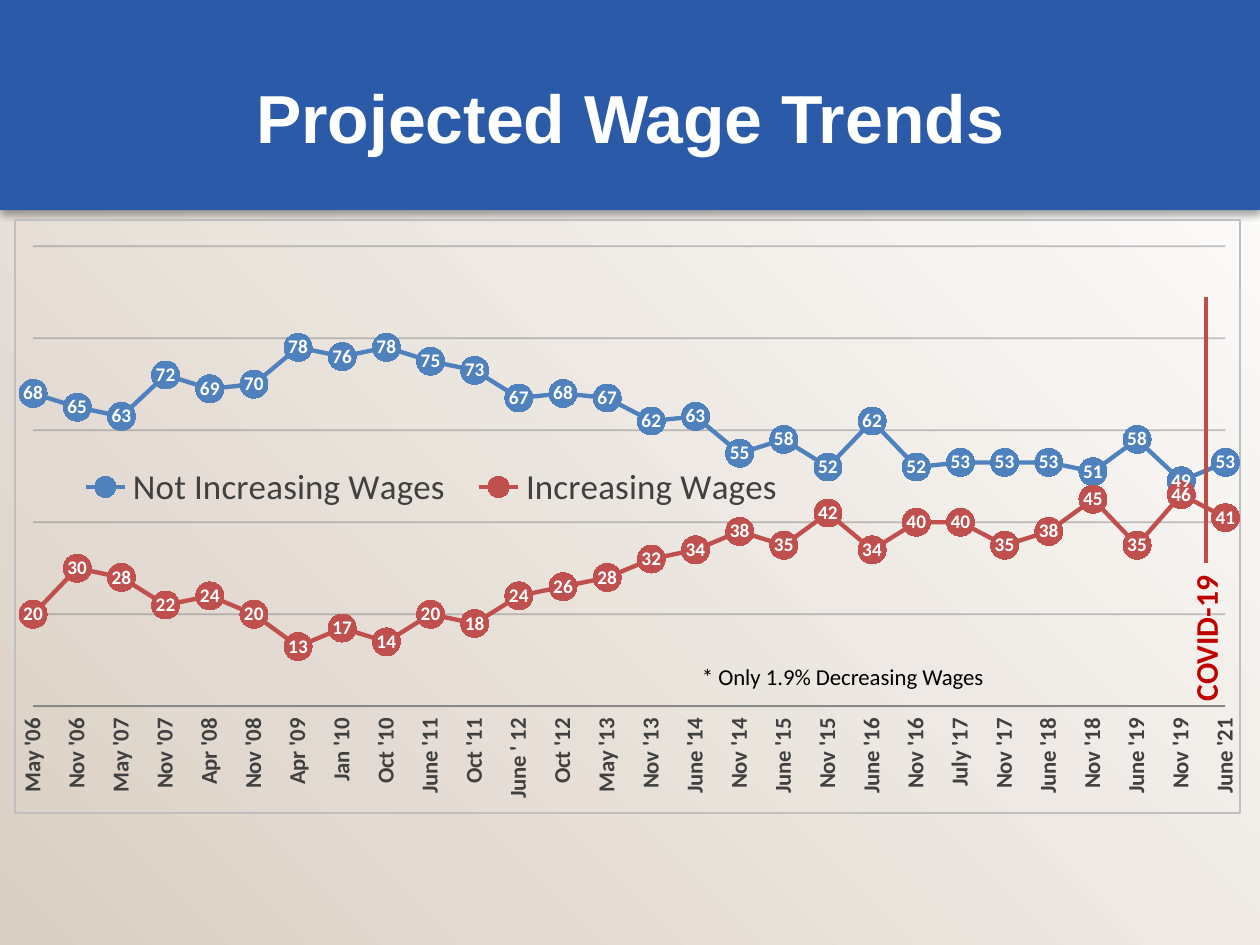
"""Build the wage trends slide."""
from dataclasses import dataclass

from lxml.etree import SubElement
from pptx import Presentation
from pptx.chart.data import CategoryChartData
from pptx.dml.color import RGBColor
from pptx.enum.chart import (XL_CHART_TYPE, XL_LABEL_POSITION, XL_LEGEND_POSITION,
                             XL_MARKER_STYLE, XL_TICK_LABEL_POSITION, XL_TICK_MARK)
from pptx.enum.shapes import MSO_CONNECTOR, MSO_SHAPE
from pptx.enum.text import MSO_ANCHOR, MSO_AUTO_SIZE, PP_ALIGN
from pptx.oxml import parse_xml
from pptx.oxml.ns import nsdecls, qn
from pptx.util import Cm, Pt


@dataclass(frozen=True)
class Theme:
    """Colours, fonts and type sizes."""
    head: str = "Arial"
    body: str = "Calibri"
    white: str = "FFFFFF"
    black: str = "000000"
    sand: str = "DACFC4"
    band: str = "2B5AA9"
    text: str = "404040"
    axis: str = "888888"
    grid: str = "666666"
    edge: str = "BFBFBF"
    alert: str = "C00000"
    mark: str = "BF4C48"
    title: float = 38.8
    key: float = 20
    event: float = 18
    small: float = 13
    value: float = 11
    base: float = 10


@dataclass(frozen=True)
class Trend:
    """One line of the chart."""
    name: str
    color: str
    values: tuple


@dataclass(frozen=True)
class Label:
    """A short text on top of the chart, placed in centimetres."""
    text: str
    box: tuple
    size: float
    color: str
    bold: bool = False
    turn: int = 0


THEME = Theme()
DATES = ("May '06", "Nov '06", "May '07", "Nov '07", "Apr '08", "Nov '08", "Apr '09",
         "Jan '10", "Oct '10", "June '11", "Oct '11", "June ' 12", "Oct '12", "May '13",
         "Nov '13", "June '14", "Nov '14", "June '15", "Nov '15", "June '16", "Nov '16",
         "July '17", "Nov '17", "June '18", "Nov '18", "June '19", "Nov '19", "June '21")
TRENDS = (
    Trend("Not Increasing Wages", "4F81BD",
          (68, 65, 63, 72, 69, 70, 78, 76, 78, 75, 73, 67, 68, 67,
           62, 63, 55, 58, 52, 62, 52, 53, 53, 53, 51, 58, 49, 53)),
    Trend("Increasing Wages", "C0504D",
          (20, 30, 28, 22, 24, 20, 13, 17, 14, 20, 18, 24, 26, 28,
           32, 34, 38, 35, 42, 34, 40, 40, 35, 38, 45, 35, 46, 41)))
LABELS = (
    Label("* Only 1.9% Decreasing Wages", (14.02, 13.23, 6.05, 0.81), THEME.small, THEME.black),
    Label("COVID-19", (22.43, 11.89, 3.73, 1.02), THEME.event, THEME.alert, True, 270))


def rgb(code: str) -> RGBColor:
    """Turn a hex code into a colour."""
    return RGBColor.from_string(code)


def style(font, size: float, color: str, bold: bool = False, face: str = THEME.body) -> None:
    """Set the look of a font."""
    font.name, font.size, font.bold = face, Pt(size), bold
    font.color.rgb = rgb(color)


def stroke(line, color: str, width: float) -> None:
    """Set the colour and width of a line."""
    line.color.rgb, line.width = rgb(color), Pt(width)


def write(frame, text: str):
    """Add a run to a frame with narrow margins and return its font."""
    frame.margin_left = frame.margin_right = frame.margin_top = frame.margin_bottom = Cm(0.13)
    run = frame.paragraphs[0].add_run()
    run.text = text
    return run.font


def panel(slide, height: float):
    """Add a box as wide as the slide, with no line."""
    shape = slide.shapes.add_shape(MSO_SHAPE.RECTANGLE, 0, 0, Cm(25.4), Cm(height))
    shape.line.fill.background()
    shape.shadow.inherit = False
    return shape


def draw_base(slide) -> None:
    """Draw the shaded ground and the top band."""
    fill = panel(slide, 19.05).fill
    fill.gradient()
    fill.gradient_angle = 45
    for stop, color in zip(fill.gradient_stops, (THEME.sand, THEME.white)):
        stop.color.rgb = rgb(color)
    band = panel(slide, 4.24)
    band.fill.solid()
    band.fill.fore_color.rgb = rgb(THEME.band)
    band.element.spPr.find(qn("a:effectLst")).append(parse_xml(
        f'<a:outerShdw {nsdecls("a")} blurRad="{Pt(4)}" dist="{Pt(2.2)}" dir="5400000">'
        f'<a:srgbClr val="{THEME.black}"><a:alpha val="32000"/></a:srgbClr></a:outerShdw>'))


def draw_title(slide, text: str) -> None:
    """Fill the title and lift it over the band."""
    title = slide.shapes.title
    title.left, title.top, title.width, title.height = map(Cm, (1.27, 0.76, 22.86, 3.18))
    frame = title.text_frame
    frame.auto_size, frame.vertical_anchor = MSO_AUTO_SIZE.NONE, MSO_ANCHOR.MIDDLE
    frame.paragraphs[0].alignment = PP_ALIGN.CENTER
    style(write(frame, text), THEME.title, THEME.white, True, THEME.head)
    title.element.getparent().append(title.element)


def set_part(part, spot: int, **rules) -> None:
    """Give a chart part a fixed layout."""
    for old in part.findall(qn("c:layout")):
        part.remove(old)
    root = parse_xml(f'<c:layout {nsdecls("c")}><c:manualLayout/></c:layout>')
    for tag, value in rules.items():
        SubElement(root[0], qn(f"c:{tag}")).set("val", str(value))
    part.insert(spot, root)


def style_trend(line, trend: Trend) -> None:
    """Set the line, dots and labels of a trend."""
    line.smooth = False
    stroke(line.format.line, trend.color, 2.5)
    dot = line.marker
    dot.style, dot.size = XL_MARKER_STYLE.CIRCLE, 16
    dot.format.fill.solid()
    dot.format.fill.fore_color.rgb = dot.format.line.color.rgb = rgb(trend.color)
    tags = line.data_labels
    tags.show_value, tags.position = True, XL_LABEL_POSITION.CENTER
    tags.number_format, tags.number_format_is_linked = "0", False
    style(tags.font, THEME.value, THEME.white, True)


def style_axes(dates, scale) -> None:
    """Set both axes and the grid."""
    dates.major_tick_mark = scale.major_tick_mark = XL_TICK_MARK.NONE
    dates.tick_label_position = XL_TICK_LABEL_POSITION.LOW
    scale.tick_label_position = XL_TICK_LABEL_POSITION.NONE
    style(dates.tick_labels.font, THEME.small, THEME.text, True)
    stroke(dates.format.line, THEME.axis, 1)
    dates._element.find(f'{qn("c:txPr")}/{qn("a:bodyPr")}').set("rot", "-5400000")
    scale.minimum_scale, scale.maximum_scale, scale.major_unit = 0, 100, 20
    scale.format.line.fill.background()
    stroke(scale.major_gridlines.format.line, THEME.grid, 1)
    root = scale._element
    tint = root.find(f'{qn("c:majorGridlines")}//{qn("a:srgbClr")}')
    SubElement(tint, qn("a:alpha")).set("val", "39000")
    for old in root.findall(qn("c:crossBetween")):
        root.remove(old)
    root.find(qn("c:crosses")).addnext(
        parse_xml(f'<c:crossBetween {nsdecls("c")} val="midCat"/>'))


def draw_chart(slide) -> None:
    """Draw the line chart of all trends."""
    data = CategoryChartData()
    data.categories = DATES
    for trend in TRENDS:
        data.add_series(trend.name, trend.values)
    place = map(Cm, (0.28, 4.42, 24.74, 11.99))
    chart = slide.shapes.add_chart(XL_CHART_TYPE.LINE_MARKERS, *place, data).chart
    chart.has_title, chart.has_legend = False, True
    style(chart.font, THEME.base, THEME.black)
    chart.plots[0].vary_by_categories = False
    for line, trend in zip(chart.plots[0].series, TRENDS):
        style_trend(line, trend)
    style_axes(chart.category_axis, chart.value_axis)
    key, root = chart.legend, chart._chartSpace
    key.position, key.include_in_layout = XL_LEGEND_POSITION.RIGHT, True
    style(key.font, THEME.key, THEME.text)
    edge = {"xMode": "edge", "yMode": "edge"}
    set_part(key._element, 1, **edge, x=0.04, y=0.41, w=0.6, h=0.08)
    set_part(root.find(f'.//{qn("c:plotArea")}'), 0, layoutTarget="inner", **edge,
             x=0.015, y=0.044, w=0.973, h=0.776)
    root.find(qn("c:txPr")).addprevious(parse_xml(
        f'<c:spPr {nsdecls("c", "a")}><a:noFill/><a:ln w="{Pt(1)}"><a:solidFill>'
        f'<a:srgbClr val="{THEME.edge}"/></a:solidFill></a:ln></c:spPr>'))


def draw_label(slide, label: Label) -> None:
    """Draw one label."""
    shape = slide.shapes.add_textbox(*map(Cm, label.box))
    shape.rotation = label.turn
    frame = shape.text_frame
    frame.word_wrap, frame.auto_size = bool(label.turn), MSO_AUTO_SIZE.SHAPE_TO_FIT_TEXT
    style(write(frame, label.text), label.size, label.color, label.bold)


def main() -> None:
    """Build and save the deck."""
    deck = Presentation()
    deck.slide_width, deck.slide_height = Cm(25.4), Cm(19.05)
    slide = deck.slides.add_slide(deck.slide_layouts[5])
    draw_base(slide)
    draw_title(slide, "Projected Wage Trends")
    draw_chart(slide)
    for label in LABELS:
        draw_label(slide, label)
    mark = slide.shapes.add_connector(MSO_CONNECTOR.STRAIGHT,
                                      *map(Cm, (24.31, 11.35, 24.31, 5.99)))
    stroke(mark.line, THEME.mark, 2.25)
    SubElement(mark.element.spPr, qn("a:effectLst"))
    deck.save("out.pptx")


if __name__ == "__main__":
    main()
